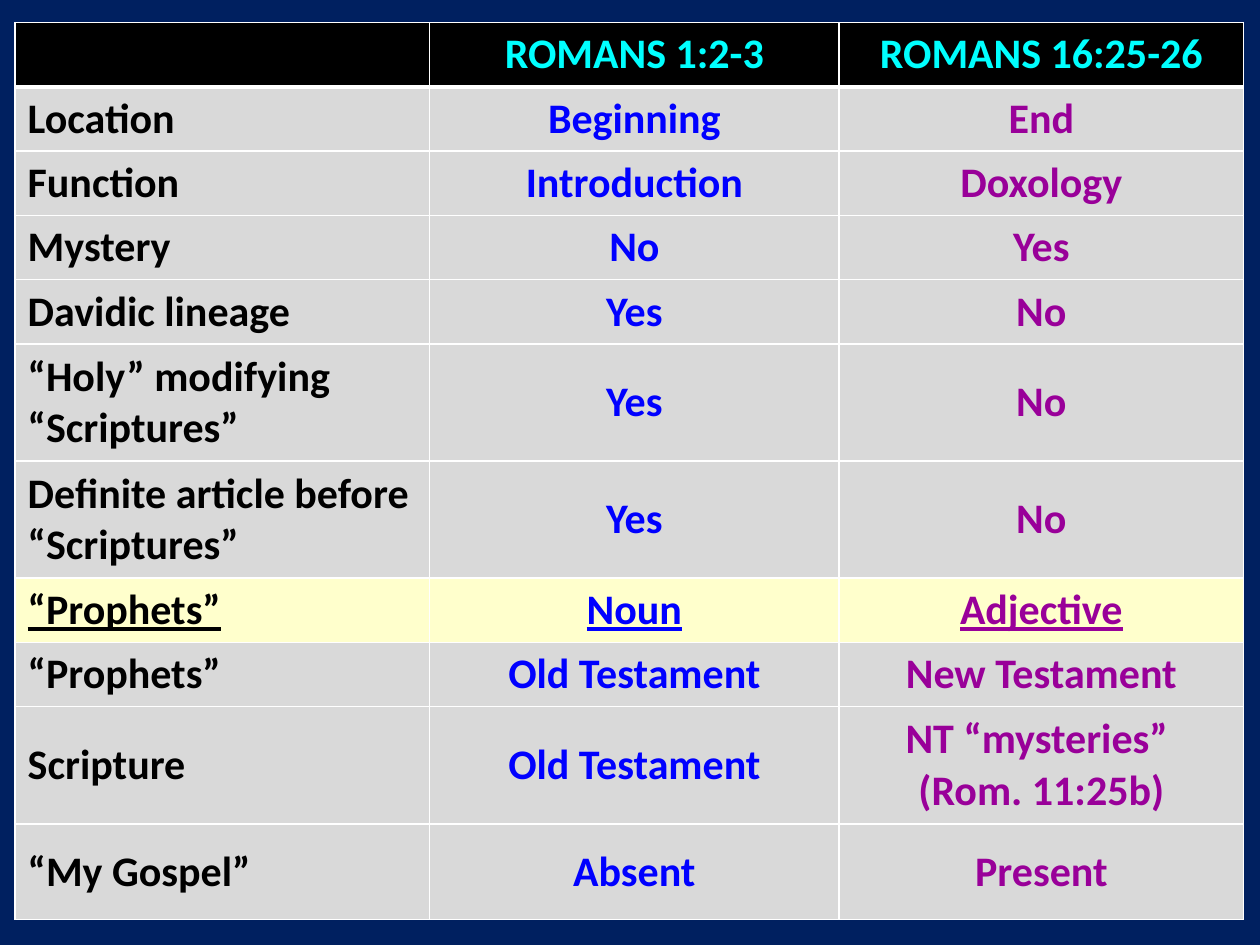
import pptx
import pptx.util
import pptx.dml.color
import pptx.enum.text
from lxml import etree
from pptx.oxml.ns import qn
from pptx.util import Inches

FONT = "Calibri"
HEADER_FILL, ROW_FILL, KEY_FILL = "000000", "D9D9D9", "FFFFCC"
HEADER_TEXT = "00FFFF"
COLUMN_TEXT = ["000000", "0000FF", "990099"]
COLUMN_WIDTHS = [3.29, 3.25, 3.21]
SINGLE, DOUBLE, LAST = 0.51, 0.93, 0.76
KEY_ROW = 7

# Row height, then the text of the three columns
ROWS = [
    (SINGLE, "", "ROMANS 1:2-3", "ROMANS 16:25-26"),
    (SINGLE, "Location", "Beginning", "End"),
    (SINGLE, "Function", "Introduction", "Doxology"),
    (SINGLE, "Mystery", "No", "Yes"),
    (SINGLE, "Davidic lineage", "Yes", "No"),
    (DOUBLE, "“Holy” modifying “Scriptures”", "Yes", "No"),
    (DOUBLE, "Definite article before “Scriptures”", "Yes", "No"),
    (SINGLE, "“Prophets”", "Noun", "Adjective"),
    (SINGLE, "“Prophets”", "Old Testament", "New Testament"),
    (DOUBLE, "Scripture", "Old Testament", "NT “mysteries” \n(Rom. 11:25b)"),
    (LAST, "“My Gospel”", "Absent", "Present"),
]


def color(value):
    return pptx.dml.color.RGBColor.from_string(value)


def paint(fill, value):
    fill.solid()
    fill.fore_color.rgb = color(value)


def set_borders(cell, widths, value="FFFFFF"):
    """Draw the cell's edges; widths maps L, R, T, B (in that order) to points."""
    properties = cell._tc.get_or_add_tcPr()
    for position, (side, width) in enumerate(widths.items()):
        line = etree.Element(qn(f"a:ln{side}"), w=str(pptx.util.Pt(width)))
        solid = etree.SubElement(line, qn("a:solidFill"))
        etree.SubElement(solid, qn("a:srgbClr"), val=value)
        properties.insert(position, line)


def write_cell(cell, text, text_color, centered, underlined):
    for number, line in enumerate(text.split("\n")):
        frame = cell.text_frame
        para = frame.add_paragraph() if number else frame.paragraphs[0]
        if centered:
            para.alignment = pptx.enum.text.PP_ALIGN.CENTER
        span = para.add_run()
        span.text = line
        span.font.name = FONT
        span.font.size = pptx.util.Pt(24)
        span.font.bold = True
        span.font.underline = underlined
        span.font.color.rgb = color(text_color)


def add_comparison(page, left, top, width, height):
    table = page.shapes.add_table(
        len(ROWS), len(COLUMN_WIDTHS), left, top, width, height).table
    for column, column_width in zip(table.columns, COLUMN_WIDTHS):
        column.width = Inches(column_width)

    for row, (row_height, *texts) in enumerate(ROWS):
        table.rows[row].height = Inches(row_height)
        header, key = row == 0, row == KEY_ROW
        for column, text in enumerate(texts):
            cell = table.cell(row, column)
            paint(cell.fill, HEADER_FILL if header else KEY_FILL if key else ROW_FILL)
            # The rule under the header is heavier
            set_borders(cell, {"L": 1, "R": 1, "T": 3 if row == 1 else 1,
                               "B": 3 if header else 1})
            if not header:
                cell.vertical_anchor = pptx.enum.text.MSO_ANCHOR.MIDDLE
            if text:
                write_cell(cell, text, HEADER_TEXT if header else COLUMN_TEXT[column],
                           centered=column > 0, underlined=key)


def main():
    deck = pptx.Presentation()
    deck.slide_width, deck.slide_height = Inches(10), Inches(7.5)
    page = deck.slides.add_slide(deck.slide_layouts[6])
    paint(page.background.fill, "002060")
    add_comparison(page, Inches(0.12), Inches(0.18), Inches(9.75), Inches(7.13))
    deck.save("out.pptx")


if __name__ == "__main__":
    main()
